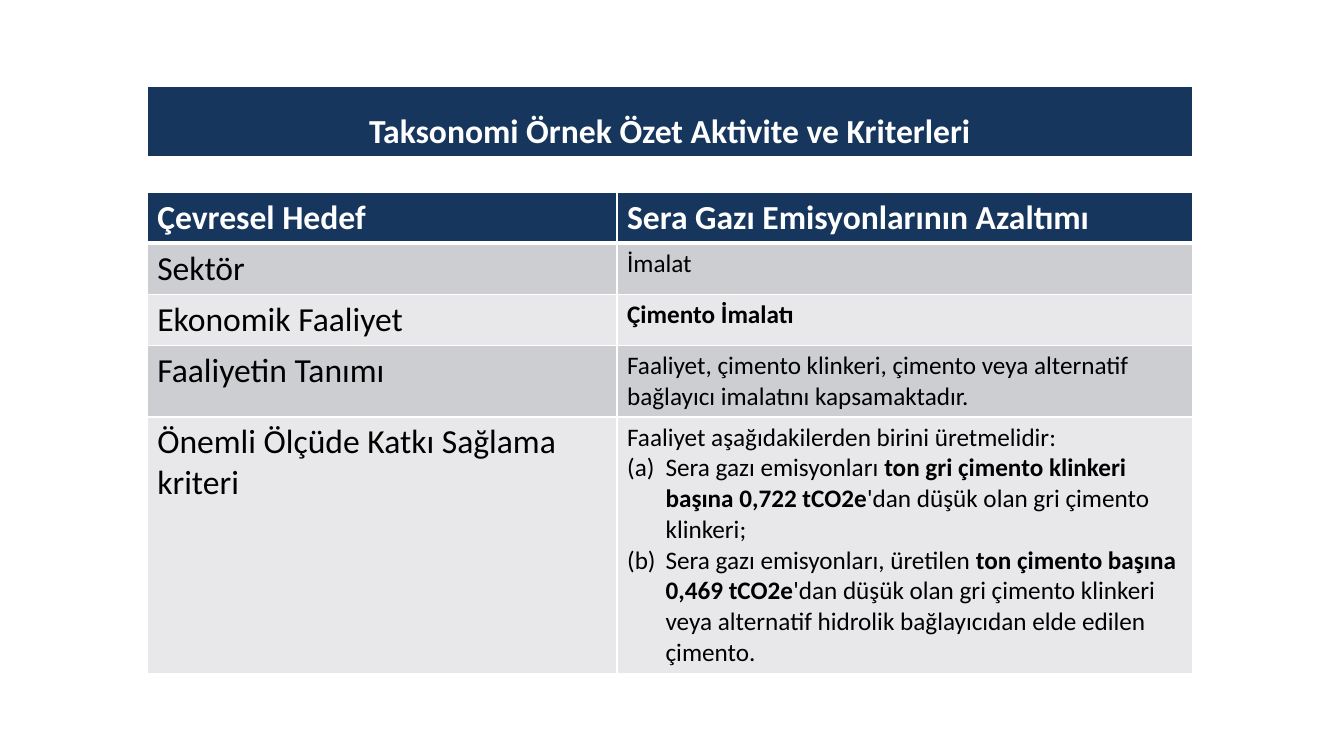
from lxml import etree
from pptx import Presentation
from pptx.dml.color import RGBColor
from pptx.enum.text import PP_ALIGN
from pptx.oxml.ns import qn
from pptx.util import Cm, Pt

CENTER = PP_ALIGN.CENTER
COLORS = {
    "navy": "17365D",
    "white": "FFFFFF",
    "black": "000000",
    "dark_band": "CCCED2",
    "light_band": "E8E8EA",
}
LEFT, WIDTH = Cm(3.71), Cm(26.34)


def style_cell(cell, fill, top=1, bottom=1):
    properties = cell._tc.get_or_add_tcPr()
    for side, width in (("L", 1), ("R", 1), ("T", top), ("B", bottom)):
        line = etree.SubElement(properties, qn("a:ln" + side), w=str(Pt(width)))
        solid = etree.SubElement(line, qn("a:solidFill"))
        etree.SubElement(solid, qn("a:srgbClr"), val=COLORS["white"])
    cell.fill.solid()
    cell.fill.fore_color.rgb = RGBColor.from_string(COLORS[fill])


def write_cell(cell, paragraphs, size, color):
    frame = cell.text_frame
    for index, pieces in enumerate(paragraphs):
        paragraph = frame.add_paragraph() if index else frame.paragraphs[0]
        if index:
            layout = paragraph._p.get_or_add_pPr()
            layout.set("marL", str(Cm(0.97)))
            layout.set("indent", str(-Cm(0.97)))
            etree.SubElement(layout, qn("a:buAutoNum"), type="alphaLcParenBoth")
        for words, bold in pieces:
            run = paragraph.add_run()
            run.text = words
            run.font.name = "Calibri"
            run.font.size = Pt(size)
            run.font.bold = bold
            run.font.color.rgb = RGBColor.from_string(COLORS[color])


prs = Presentation()
prs.slide_width, prs.slide_height = Cm(33.87), Cm(19.05)
slide = prs.slides.add_slide(prs.slide_layouts[6])

banner = slide.shapes.add_table(2, 1, LEFT, Cm(2.17), WIDTH, Cm(3.14)).table
banner.rows[0].height, banner.rows[1].height = Cm(1.72), Cm(1.42)
heading = banner.cell(0, 0)
style_cell(heading, "navy", bottom=3)
write_cell(heading, [[("Taksonomi Örnek Özet Aktivite ve Kriterleri", True)]], 24, "white")
heading.text_frame.paragraphs[0].alignment = CENTER
heading.text_frame.paragraphs[0].line_spacing = 1.5
style_cell(banner.cell(1, 0), "white", top=3)

criteria = [
    ("Çevresel Hedef", [[("Sera Gazı Emisyonlarının Azaltımı", True)]], 1.27),
    ("Sektör", [[("İmalat", False)]], 1.27),
    ("Ekonomik Faaliyet", [[("Çimento İmalatı", True)]], 1.27),
    ("Faaliyetin Tanımı", [[(
        "Faaliyet, çimento klinkeri, çimento veya alternatif bağlayıcı imalatını kapsamaktadır.",
        False)]], 1.79),
    ("Önemli Ölçüde Katkı Sağlama kriteri", [
        [("Faaliyet aşağıdakilerden birini üretmelidir:", False)],
        [("Sera gazı emisyonları ", False),
         ("ton gri çimento klinkeri başına 0,722 tCO2e", True),
         ("'dan düşük olan gri çimento klinkeri;", False)],
        [("Sera gazı emisyonları, üretilen ", False),
         ("ton çimento başına 0,469 tCO2e", True),
         ("'dan düşük olan gri çimento klinkeri veya alternatif hidrolik "
          "bağlayıcıdan elde edilen çimento.", False)],
    ], 6.35),
]

table = slide.shapes.add_table(len(criteria), 2, LEFT, Cm(4.84), WIDTH, Cm(11.95)).table
table.columns[0].width, table.columns[1].width = Cm(11.84), Cm(14.5)
for row, (label, details, height) in enumerate(criteria):
    header = row == 0
    table.rows[row].height = Cm(height)
    fill = "navy" if header else ("light_band", "dark_band")[row % 2]
    color = "white" if header else "black"
    for column in range(2):
        style_cell(table.cell(row, column), fill, 3 if row == 1 else 1, 3 if header else 1)
    write_cell(table.cell(row, 0), [[(label, header)]], 24, color)
    write_cell(table.cell(row, 1), details, 24 if header else 18, color)

prs.save("out.pptx")
